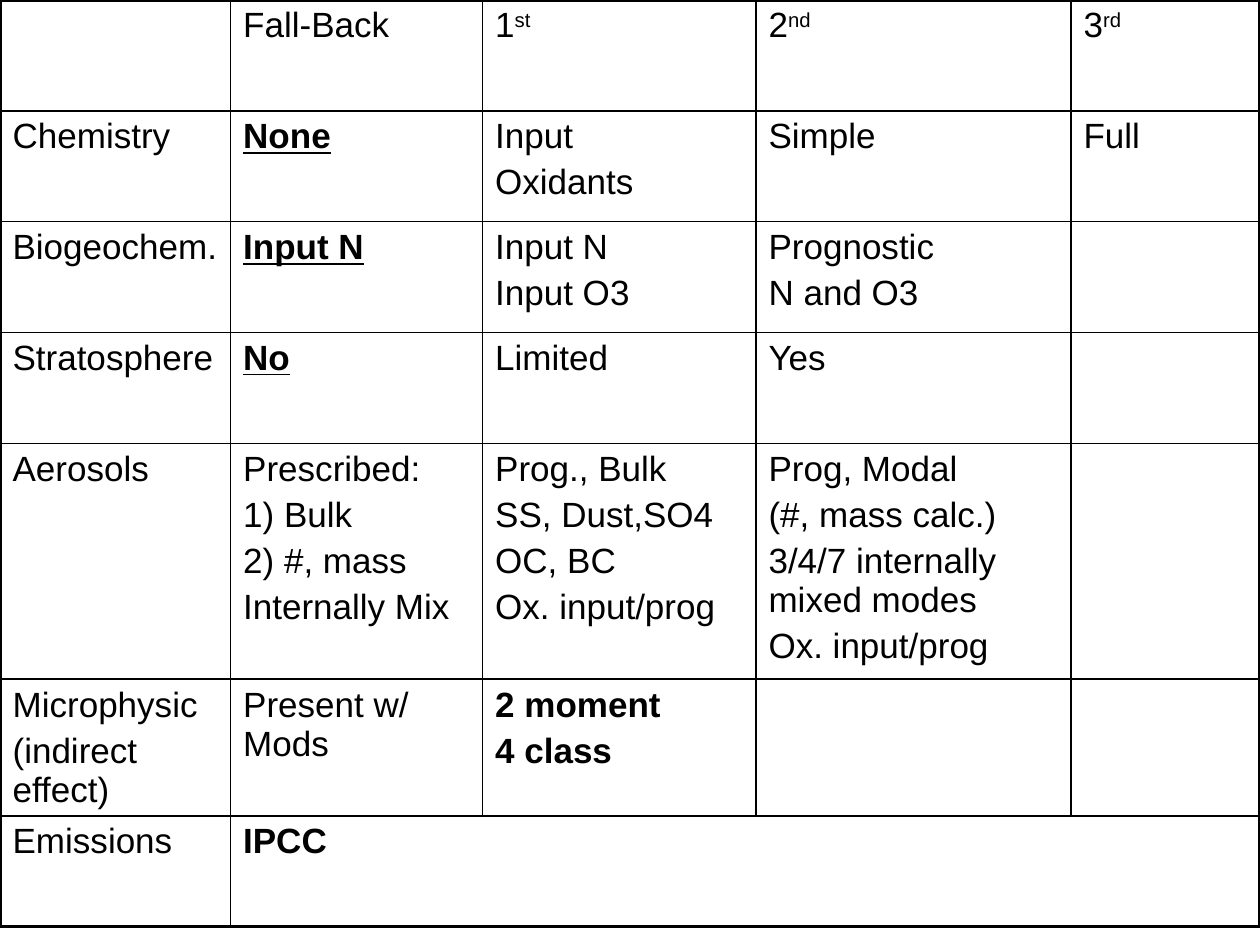
import pptx
import pptx.dml.color
import pptx.oxml
import pptx.oxml.ns
import pptx.util
from dataclasses import dataclass


@dataclass(frozen=True)
class Theme:
    font: str = "Arial"
    size: int = 20
    ink: str = "000000"
    thin: float = 1
    thick: float = 2.25
    gap: int = 20    # space before a paragraph, % of a line
    lift: int = 30   # superscript, % of the type size


THEME = Theme()
WIDE, HIGH = 10, 7.5

# Column and row weights of the grid
COLS = [1.83, 2, 2.17, 2.5, 1.5]
ROWS = [0.88] * 4 + [1.87, 1.08, 0.88]

# "|" parts paragraphs, "^" starts a superscript
CELLS = [
    ["", "Fall-Back", "1^st", "2^nd", "3^rd"],
    ["Chemistry", "None", "Input|Oxidants", "Simple", "Full"],
    ["Biogeochem.", "Input N", "Input N|Input O3", "Prognostic|N and O3", ""],
    ["Stratosphere", "No", "Limited", "Yes", ""],
    ["Aerosols", "Prescribed:|1) Bulk|2) #, mass|Internally Mix",
     "Prog., Bulk|SS, Dust,SO4|OC, BC|Ox. input/prog",
     "Prog, Modal|(#, mass calc.)|3/4/7 internally mixed modes|Ox. input/prog",
     ""],
    ["Microphysic|(indirect effect)", "Present w/ Mods", "2 moment|4 class",
     "", ""],
    ["Emissions", "IPCC", "", "", ""],
]
LINED = {(1, 1), (2, 1), (3, 1)}    # bold and underlined
BOLD = LINED | {(5, 2), (6, 1)}


def share(parts, whole):
    total = sum(parts)
    return [pptx.util.Inches(whole * part / total) for part in parts]


def add_run(para, text, bold, lined, raised):
    run = para.add_run()
    run.text = text
    font = run.font
    font.name, font.size = THEME.font, pptx.util.Pt(THEME.size)
    font.color.rgb = pptx.dml.color.RGBColor.from_string(THEME.ink)
    font.bold, font.underline = bold, lined
    if raised:
        run._r.get_or_add_rPr().set("baseline", str(THEME.lift * 1000))


def space(para):
    # Space before as a share of the line needs XML
    para._p.get_or_add_pPr().insert(0, pptx.oxml.parse_xml(
        f'<a:spcBef {pptx.oxml.ns.nsdecls("a")}>'
        f'<a:spcPct val="{THEME.gap * 1000}"/></a:spcBef>'))


def write(cell, text, bold, lined):
    frame = cell.text_frame
    for i, line in enumerate(text.split("|")):
        para = frame.add_paragraph() if i else frame.paragraphs[0]
        space(para)
        for j, part in enumerate(line.split("^")):
            if part:
                add_run(para, part, bold, lined, j > 0)


def edge(cell, row, col):
    # Thick lines round the table, thin lines inside
    outer = {"L": col == 0, "R": col == len(COLS) - 1 or cell.is_merge_origin,
             "T": row == 0, "B": row == len(ROWS) - 1}
    props = cell._tc.get_or_add_tcPr()
    for i, (side, thick) in enumerate(outer.items()):
        width = pptx.util.Pt(THEME.thick if thick else THEME.thin)
        props.insert(i, pptx.oxml.parse_xml(
            f'<a:ln{side} {pptx.oxml.ns.nsdecls("a")} w="{width}">'
            f'<a:solidFill><a:srgbClr val="{THEME.ink}"/></a:solidFill>'
            f'</a:ln{side}>'))


def add_grid(slide, left, top, width, height):
    table = slide.shapes.add_table(
        len(ROWS), len(COLS),
        *map(pptx.util.Inches, (left, top, width, height))).table
    table.first_row = table.horz_banding = False
    for col, size in zip(table.columns, share(COLS, width)):
        col.width = size
    for row, size in zip(table.rows, share(ROWS, height)):
        row.height = size

    # The last row is one wide cell after its label
    last = len(ROWS) - 1
    table.cell(last, 1).merge(table.cell(last, len(COLS) - 1))

    for r, line in enumerate(CELLS):
        for c, text in enumerate(line):
            cell = table.cell(r, c)
            cell.fill.background()
            edge(cell, r, c)
            if not cell.is_spanned:
                write(cell, text, (r, c) in BOLD, (r, c) in LINED)


def main():
    deck = pptx.Presentation()
    deck.slide_width = pptx.util.Inches(WIDE)
    deck.slide_height = pptx.util.Inches(HIGH)
    slide = deck.slides.add_slide(deck.slide_layouts[6])
    add_grid(slide, 0, 0, WIDE, 0.98 * HIGH)
    deck.save("out.pptx")


if __name__ == "__main__":
    main()
